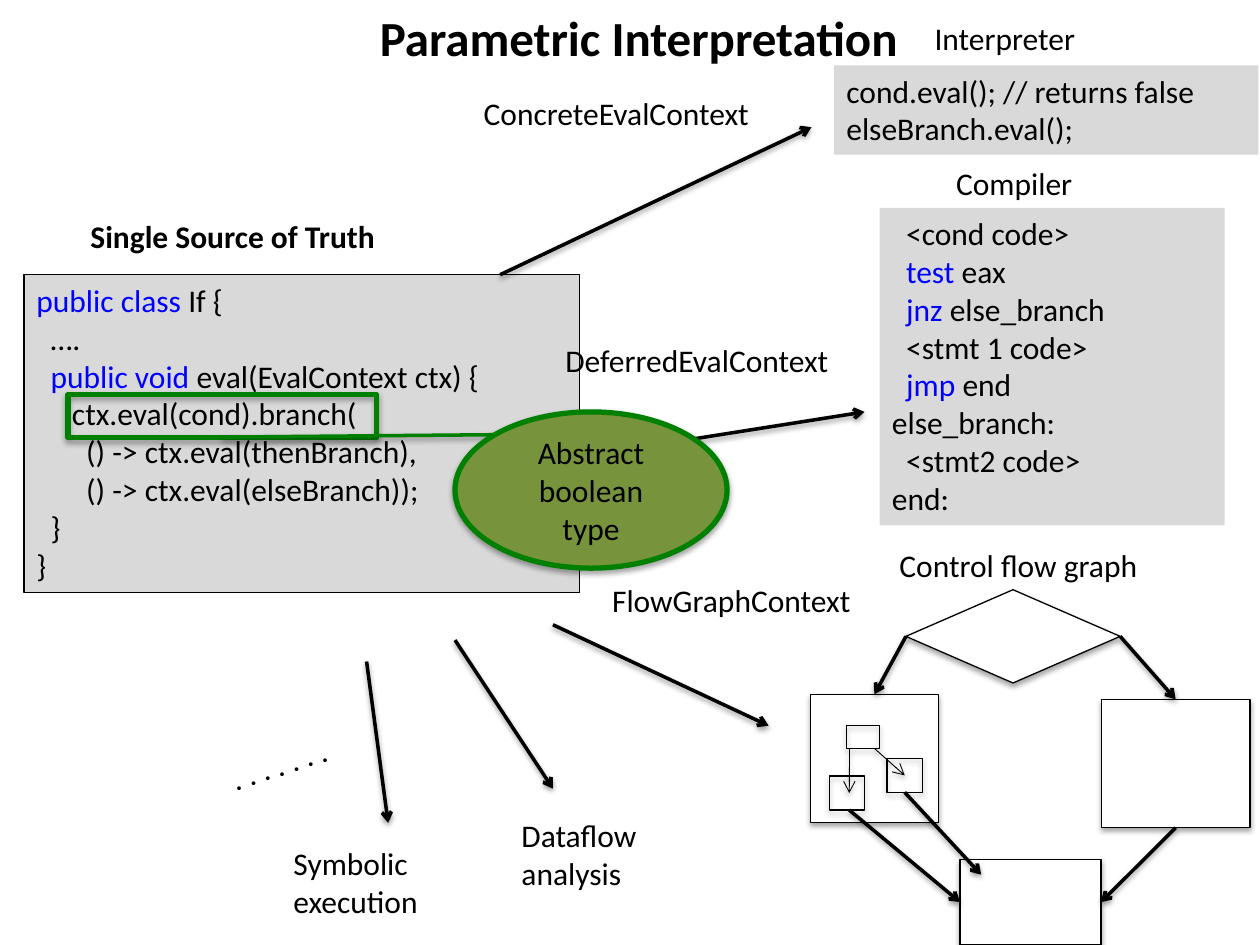
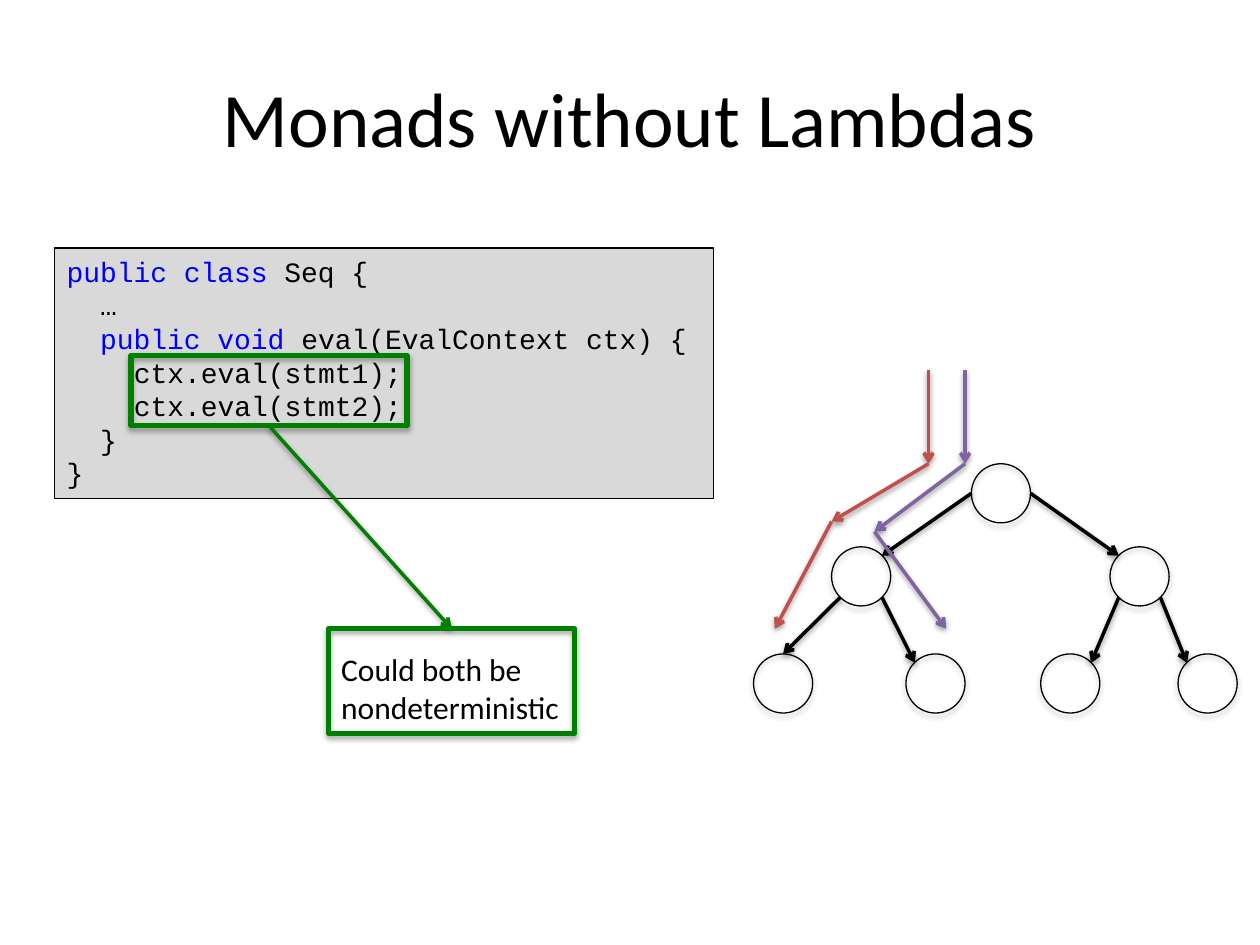
import pptx
import pptx.util
import pptx.dml.color
import pptx.enum.shapes
import pptx.enum.text
import pptx.oxml
import pptx.oxml.ns

Pt = pptx.util.Pt
RGB = pptx.dml.color.RGBColor
SHAPE = pptx.enum.shapes.MSO_SHAPE
ALIGN = pptx.enum.text.PP_ALIGN
ANCHOR = pptx.enum.text.MSO_ANCHOR

BLACK = RGB(0x00, 0x00, 0x00)
WHITE = RGB(0xFF, 0xFF, 0xFF)
GRAY = RGB(0xD9, 0xD9, 0xD9)
BLUE = RGB(0x00, 0x00, 0xFF)
GREEN = RGB(0x00, 0x80, 0x00)
OLIVE = RGB(0x77, 0x93, 0x3C)
RED = RGB(0xC0, 0x50, 0x4D)
PURPLE = RGB(0x80, 0x64, 0xA2)

BODY, CODE = "Calibri", "Courier New"
SPACE = {BODY: 0.226, CODE: 0.6}  # width of one space, in ems

# Code lines: (indent in spaces, keyword, rest)
IF_CLASS = [
    (0, "public class", " If {"),
    (2, "", "…."),
    (2, "public void", " eval(EvalContext ctx) {"),
    (5, "", "ctx.eval(cond).branch("),
    (7, "", "() -> ctx.eval(thenBranch),"),
    (7, "", "() -> ctx.eval(elseBranch));"),
    (2, "", "}"),
    (0, "", "}"),
]
INTERPRETER = [
    (0, "", "cond.eval(); // returns false"),
    (0, "", "elseBranch.eval();"),
]
COMPILER = [
    (2, "", "<cond code>"),
    (2, "test", " eax"),
    (2, "jnz", " else_branch"),
    (2, "", "<stmt 1 code>"),
    (2, "jmp", " end"),
    (0, "", "else_branch:"),
    (2, "", "<stmt2 code>"),
    (0, "", "end:"),
]
SEQ_CLASS = [
    (0, "public class", " Seq {"),
    (2, "", "…"),
    (2, "public void", " eval(EvalContext ctx) {"),
    (4, "", "ctx.eval(stmt1);"),
    (4, "", "ctx.eval(stmt2);"),
    (2, "", "}"),
    (0, "", "}"),
]

# Labels: lines, box, bold, rotation
LABELS = [
    (["ConcreteEvalContext"], (269.3, 50.4, 169.2, 29), False, 0),
    (["DeferredEvalContext"], (316, 191.5, 168.5, 29), False, 0),
    (["FlowGraphContext"], (342.7, 328.3, 153.4, 29), False, 0),
    (["Interpreter"], (527, 7.2, 96.5, 29), False, 0),
    (["Compiler"], (539.3, 90, 81.4, 29), False, 0),
    (["Control flow graph"], (506.9, 308.2, 152.6, 29), False, 0),
    (["Dataflow", "analysis"], (290.9, 463, 81.4, 51), False, 0),
    (["Symbolic", "execution"], (160.6, 478.8, 87, 51), False, 0),
    (["Single Source of Truth"], (44.6, 120.2, 180, 29), True, 0),
    ([(1, "", ". . . . . . .")], (120.2, 422.6, 75.6, 29), False, -18),
]
CONTEXT_ARROWS = [
    ((285.8, 157), (463.7, 72.7)),
    ((316, 263.5), (494, 235.4)),
    ((316, 357), (439.2, 414.7)),
    ((260, 365.8), (316, 450.7)),
    ((209.5, 378), (221.8, 470.2)),
]

# Control flow graph: name -> (preset, fill, box); edges join points of the boxes
FLOW_NODES = {
    "test": (SHAPE.DIAMOND, WHITE, (517.7, 337, 122.4, 53.3)),
    "then": (SHAPE.RECTANGLE, WHITE, (463, 396.7, 73.4, 73.4)),
    "else": (SHAPE.RECTANGLE, WHITE, (629.3, 399.6, 85, 73.4)),
    "join": (SHAPE.RECTANGLE, WHITE, (548.6, 491, 80.6, 49)),
    "inner": (SHAPE.RECTANGLE, None, (483.8, 414.7, 18.7, 13)),
    "inner right": (SHAPE.RECTANGLE, None, (506.9, 433.4, 20.2, 19.4)),
    "inner left": (SHAPE.RECTANGLE, None, (473.8, 443.5, 20.2, 19.4)),
}
FLOW_EDGES = [
    ("test", (0, 0.5), "then", (0.5, 0), 2),
    ("test", (1, 0.5), "else", (0.5, 0), 2),
    ("else", (0.5, 1), "join", (1, 0.5), 2),
    ("inner", (0.85, 1), "inner right", (0.5, 0.5), 0.5),
    ("inner", (0.09, 1), "inner left", (0.57, 0.5), 0.5),
    ("inner left", (0.57, 1), "join", (0, 0.5), 2),
    ("inner right", (0.5, 1), "join", (0.15, 0.18), 2),
]

# Tree: centres of the circles; edges join points of the circles
DIAMETER = 33.8
TREE_NODES = [(572, 281.9), (492.1, 329.4), (651.2, 329.4),
              (447.5, 390.6), (534.6, 390.6), (611.6, 390.6), (690.1, 390.6)]
NEAR, FAR = 0.15, 0.85
TREE_EDGES = [
    (0, (0, 0.5), 1, (FAR, NEAR)),
    (0, (1, 0.5), 2, (NEAR, NEAR)),
    (1, (NEAR, FAR), 3, (0.5, 0)),
    (1, (FAR, FAR), 4, (NEAR, NEAR)),
    (2, (NEAR, FAR), 5, (FAR, NEAR)),
    (2, (FAR, FAR), 6, (NEAR, NEAR)),
]
WALKS = [
    (RED, [(530.6, 211.7), (530.6, 265), (475.2, 298), (442.8, 359.3)]),
    (PURPLE, [(551.5, 211.7), (551.5, 265), (499.7, 303.8), (540.7, 359.3)]),
]


def pts(values):
    return [Pt(v) for v in values]


def point(box, fraction):
    left, top, width, height = box
    return left + fraction[0] * width, top + fraction[1] * height


def cast_shadow(effects, dist, alpha):
    effects.append(pptx.oxml.parse_xml(
        f'<a:outerShdw {pptx.oxml.ns.nsdecls("a")} blurRad="40000" dist="{dist}" '
        f'dir="5400000" rotWithShape="0"><a:srgbClr val="000000">'
        f'<a:alpha val="{alpha}"/></a:srgbClr></a:outerShdw>'))


def write(sp, lines, size=18, font=BODY, bold=False, align=ALIGN.LEFT):
    """Fill a shape with lines, each a string or (indent, keyword, rest)."""
    tf = sp.text_frame
    for i, line in enumerate(lines):
        indent, keyword, rest = (0, "", line) if isinstance(line, str) else line
        p = tf.paragraphs[0] if i == 0 else tf.add_paragraph()
        p.alignment = align
        if indent:
            margin = Pt(indent * SPACE[font] * size)
            p._p.get_or_add_pPr().set("marL", str(int(margin)))
        for text, color in ((keyword, BLUE), (rest, BLACK)):
            if text:
                r = p.add_run()
                r.text = text
                r.font.size, r.font.name, r.font.bold = Pt(size), font, bold
                r.font.color.rgb = color
    return tf


def add_title(s, text, box, size, bold=False):
    sp = s.shapes.title
    sp.left, sp.top, sp.width, sp.height = pts(box)
    tf = write(sp, [text], size, bold=bold, align=ALIGN.CENTER)
    tf.auto_size = pptx.enum.text.MSO_AUTO_SIZE.NONE
    tf.vertical_anchor = ANCHOR.MIDDLE


def add_label(s, lines, box, bold=False, rotation=0):
    sp = s.shapes.add_textbox(*pts(box))
    sp.rotation = rotation
    write(sp, lines, bold=bold).word_wrap = False


def add_box(s, preset, box, fill=None, line=BLACK, weight=0.75, shadow=True):
    sp = s.shapes.add_shape(preset, *pts(box))
    sp.shadow.inherit = False
    if fill is None:
        sp.fill.background()
    else:
        sp.fill.solid()
        sp.fill.fore_color.rgb = fill
    if line is None:
        sp.line.fill.background()
    else:
        sp.line.color.rgb = line
        sp.line.width = Pt(weight)
    if shadow:
        cast_shadow(sp._element.spPr.find(pptx.oxml.ns.qn("a:effectLst")), 23000, 35000)
    return sp


def add_code(s, lines, box, line=BLACK, size=18, font=BODY):
    sp = add_box(s, SHAPE.RECTANGLE, box, GRAY, line, shadow=False)
    write(sp, lines, size, font).vertical_anchor = ANCHOR.TOP


def add_frame(s, box):
    add_box(s, SHAPE.RECTANGLE, box, line=GREEN, weight=3)


def add_line(s, start, end, color=BLACK, weight=2, arrow=True):
    c = s.shapes.add_connector(pptx.enum.shapes.MSO_CONNECTOR.STRAIGHT,
                               *pts(start + end))
    c.line.color.rgb = color
    c.line.width = Pt(weight)
    props = c._element.spPr
    ns = pptx.oxml.ns.nsdecls("a")
    if arrow:
        ln = props.find(pptx.oxml.ns.qn("a:ln"))
        ln.append(pptx.oxml.parse_xml(f'<a:tailEnd {ns} type="arrow"/>'))
    effects = pptx.oxml.parse_xml(f"<a:effectLst {ns}/>")
    props.append(effects)
    cast_shadow(effects, 20000, 38000)


def build_interpretation(s):
    add_title(s, "Parametric Interpretation", (206.6, 0.7, 316.8, 41), 28, bold=True)
    add_code(s, IF_CLASS, (13.7, 157, 317.5, 181.4))
    add_code(s, INTERPRETER, (476.6, 37.4, 242.6, 51), line=None)
    add_code(s, COMPILER, (502.6, 118.8, 197.3, 181.4), line=None)

    # Control flow graph
    for preset, fill, box in FLOW_NODES.values():
        add_box(s, preset, box, fill)
    for a, from_a, b, to_b, weight in FLOW_EDGES:
        add_line(s, point(FLOW_NODES[a][2], from_a),
                 point(FLOW_NODES[b][2], to_b), weight=weight)

    # Contexts and what they lead to
    for start, end in CONTEXT_ARROWS:
        add_line(s, start, end)
    for label in LABELS:
        add_label(s, *label)

    # Abstract boolean call-out
    add_frame(s, (38.9, 225.4, 176.4, 24.5))
    add_line(s, (126.7, 249.8), (283, 248.4), GREEN, arrow=False)
    sp = add_box(s, SHAPE.OVAL, (260, 235.4, 155.5, 89.3), OLIVE, GREEN, 3)
    tf = write(sp, ["Abstract", "boolean type"], align=ALIGN.CENTER)
    tf.vertical_anchor = ANCHOR.MIDDLE


def build_monads(s):
    add_title(s, "Monads without Lambdas", (36, 21.6, 648, 90), 44)
    add_code(s, SEQ_CLASS, (31, 141.8, 376.6, 143.3), size=16, font=CODE)

    # Tree of choices
    circles = [(x - DIAMETER / 2, y - DIAMETER / 2, DIAMETER, DIAMETER)
               for x, y in TREE_NODES]
    for circle in circles:
        add_box(s, SHAPE.OVAL, circle)
    for a, from_a, b, to_b in TREE_EDGES:
        add_line(s, point(circles[a], from_a), point(circles[b], to_b))

    # Nondeterminism call-out
    statements, note = (74.9, 203, 157.7, 40.3), (187.9, 359.3, 140.4, 59.8)
    add_frame(s, statements)
    add_line(s, point(statements, (0.5, 1)), point(note, (0.5, 0)), GREEN)
    add_label(s, ["Could both be", "nondeterministic"], (187.9, 368, 140.4, 51))
    add_frame(s, note)

    # Two walks down the tree
    for color, stops in WALKS:
        for start, end in zip(stops, stops[1:]):
            add_line(s, start, end, color)


def main():
    prs = pptx.Presentation()
    prs.slide_width, prs.slide_height = Pt(720), Pt(540)
    for build in (build_interpretation, build_monads):
        build(prs.slides.add_slide(prs.slide_layouts[5]))
    prs.save("out.pptx")


if __name__ == "__main__":
    main()
